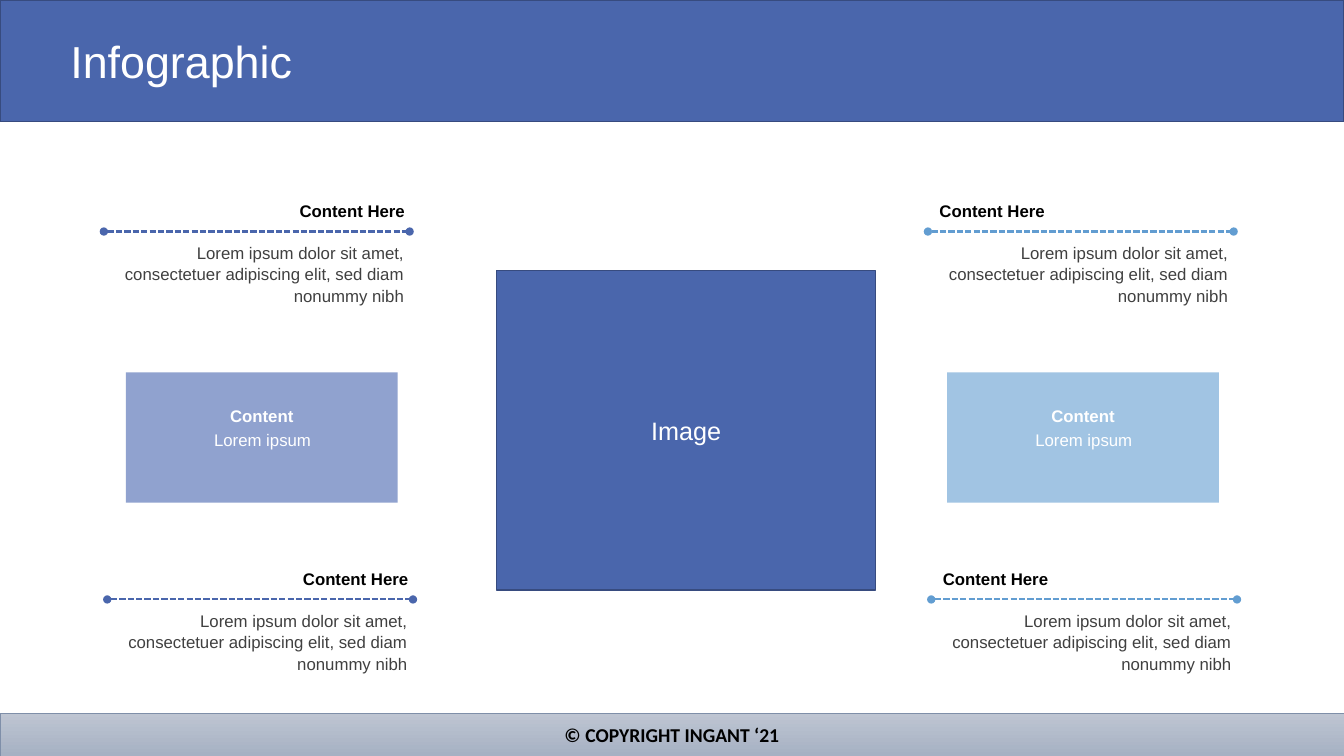
from lxml import etree
from pptx import Presentation
from pptx.dml.color import RGBColor
from pptx.enum.dml import MSO_LINE
from pptx.enum.shapes import MSO_CONNECTOR, MSO_SHAPE
from pptx.enum.text import MSO_ANCHOR, PP_ALIGN
from pptx.oxml.ns import qn
from pptx.util import Pt

RECT, STRAIGHT = MSO_SHAPE.RECTANGLE, MSO_CONNECTOR.STRAIGHT
LEFT, CENTER, RIGHT = PP_ALIGN.LEFT, PP_ALIGN.CENTER, PP_ALIGN.RIGHT
TOP, MIDDLE = MSO_ANCHOR.TOP, MSO_ANCHOR.MIDDLE
DASH = MSO_LINE.SQUARE_DOT
WIDTH, HEIGHT = 960, 540
COLORS = {
    "blue": "4A66AC", "edge": "374B7F", "sky": "629DD1",
    "pale_blue": "90A2CF", "pale_sky": "A1C4E3",
    "footer_top": "BEC5D2", "footer_bottom": "A6B1C3", "footer_edge": "7F8FA9",
    "white": "FFFFFF", "black": "000000", "gray": "404040",
}
LOREM = "Lorem ipsum dolor sit amet, consectetuer adipiscing elit, sed diam nonummy nibh"


def rgb(name):
    """Return the named colour."""
    return RGBColor.from_string(COLORS[name])


def write(sp, text, size, color, align=LEFT, anchor=TOP, bold=False, font="Arial"):
    """Fill a shape with one formatted paragraph and return it."""
    tf = sp.text_frame
    tf.word_wrap = True
    tf.vertical_anchor = anchor
    p = tf.paragraphs[0]
    p.text = text
    p.alignment = align
    f = p.runs[0].font
    f.name, f.size, f.bold = font, Pt(size), bold
    f.color.rgb = rgb(color)
    return p


def add_text(s, x, y, w, h, text, size, color, **style):
    """Add a text box and return its paragraph."""
    sp = s.shapes.add_textbox(Pt(x), Pt(y), Pt(w), Pt(h))
    return write(sp, text, size, color, **style)


def add_rect(s, x, y, w, h, fill, edge=None, weight=1):
    """Add a rectangle with a plain fill and an optional outline."""
    sp = s.shapes.add_shape(RECT, Pt(x), Pt(y), Pt(w), Pt(h))
    sp.shadow.inherit = False
    sp.fill.solid()
    sp.fill.fore_color.rgb = rgb(fill)
    if edge:
        sp.line.color.rgb = rgb(edge)
        sp.line.width = Pt(weight)
    else:
        sp.line.fill.background()
    return sp


def add_header(s, x, y, w, h):
    """Add the title band."""
    add_rect(s, x, y, w, h, "blue", "edge")
    p = add_text(s, x + 43.2, y + 17.3, w - 66.5, 56.9, "Infographic", 32, "white", anchor=MIDDLE)
    p.line_spacing = 0.9


def add_footer(s, x, y, w, h):
    """Add the gradient band with the copyright line."""
    sp = add_rect(s, x, y, w, h, "footer_top", "footer_edge", 0.5)
    sp.fill.gradient()
    sp.fill.gradient_angle = 270
    for stop, name in zip(sp.fill.gradient_stops, ("footer_top", "footer_bottom")):
        stop.color.rgb = rgb(name)
    write(sp, "© COPYRIGHT INGANT ‘21", 14, "black", CENTER, MIDDLE, True, "Calibri")


def add_rule(s, x, y, w, color):
    """Add a dashed rule with round ends."""
    cx = s.shapes.add_connector(STRAIGHT, Pt(x), Pt(y), Pt(x + w), Pt(y))
    cx.line.color.rgb = rgb(color)
    cx.line.width = Pt(1.5)
    cx.line.dash_style = DASH
    ln = cx.line._get_or_add_ln()
    for end in ("a:headEnd", "a:tailEnd"):
        etree.SubElement(ln, qn(end)).set("type", "oval")
    etree.SubElement(cx._element.spPr, qn("a:effectLst"))


def add_note(s, x, y, w, color, align):
    """Add a heading, a rule and a short paragraph."""
    add_text(s, x, y, w, 21.8, "Content Here", 12, "black", align=align, anchor=MIDDLE, bold=True)
    p = add_text(s, x, y + 29.5, w - 0.7, 51, LOREM, 12, "gray", align=RIGHT)
    p.line_spacing = 1.05
    add_rule(s, x - 1.2, y + 25.6, w - 2.6, color)


def add_card(s, x, y, w, h, fill):
    """Add a pale card with two centred lines."""
    add_rect(s, x, y, w, h, fill)
    inner = w - 70
    add_text(s, x + 35, y + 20.2, inner, 21.8, "Content", 12, "white", align=CENTER, bold=True)
    add_text(s, x + 35.6, y + 37.4, inner, 21.8, "Lorem ipsum", 12, "white", align=CENTER)


def add_column(s, x, y, w, color, pale, card_x, align):
    """Add a note, a card and a second note below each other."""
    add_note(s, x, y, w, color, align)
    add_card(s, card_x, y + 126.2, 194, 93, pale)
    add_note(s, x + 2.4, y + 262.8, w, color, align)


def main():
    """Build the infographic slide."""
    prs = Presentation()
    prs.slide_width, prs.slide_height = Pt(WIDTH), Pt(HEIGHT)
    s = prs.slides.add_slide(prs.slide_layouts[6])
    add_header(s, 0, 0, WIDTH, 87)
    add_footer(s, 0, 509.4, WIDTH, HEIGHT - 509.4)
    add_column(s, 75.4, 139.8, 221, "blue", "pale_blue", 90, RIGHT)
    add_column(s, 664, 139.8, 221, "sky", "pale_sky", 676.6, LEFT)
    image = add_rect(s, 354.8, 193.4, 270.7, 228, "blue", "edge")
    write(image, "Image", 18, "white", CENTER, MIDDLE)
    prs.save("out.pptx")


if __name__ == "__main__":
    main()
